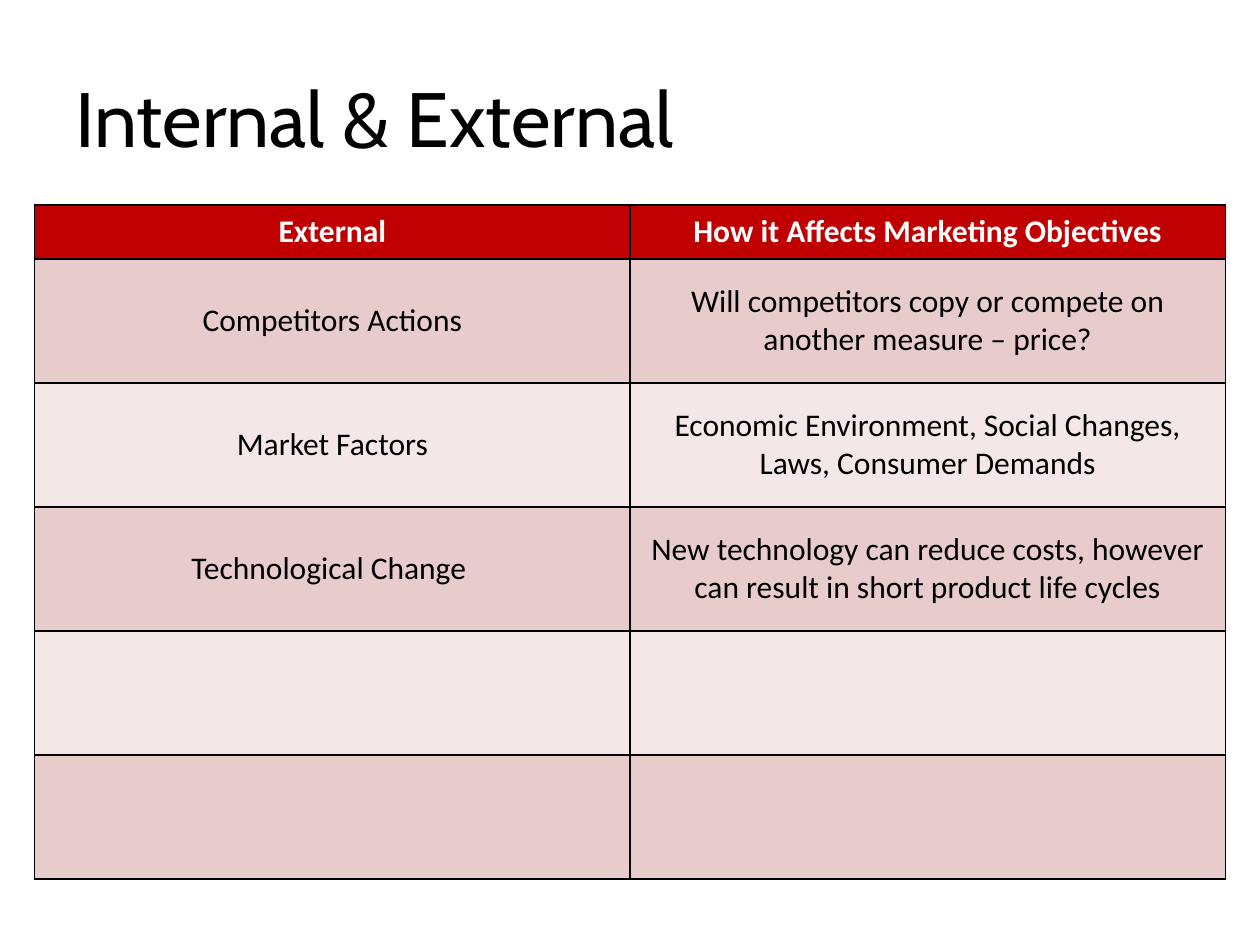
from typing import NamedTuple

from lxml import etree
from pptx import Presentation
from pptx.dml.color import RGBColor
from pptx.enum.text import MSO_ANCHOR, PP_ALIGN
from pptx.oxml.ns import qn
from pptx.util import Cm, Pt

LEFT, CENTER = PP_ALIGN.LEFT, PP_ALIGN.CENTER
MIDDLE = MSO_ANCHOR.MIDDLE
TITLE_ONLY = 5
BLACK, WHITE = "000000", "FFFFFF"
HEADER_RED, DARK_BAND, LIGHT_BAND = "C00000", "E8CCCC", "F4E7E7"
COLUMN_WIDTH, HEADER_HEIGHT, FACTOR_HEIGHT = Cm(12), Cm(1.09), Cm(2.5)


class Factor(NamedTuple):
    name: str = ""
    effect: str = ""


HEADINGS = Factor("External", "How it Affects Marketing Objectives")
FACTORS = [
    Factor("Competitors Actions",
           "Will competitors copy or compete on another measure – price?"),
    Factor("Market Factors",
           "Economic Environment, Social Changes, Laws, Consumer Demands"),
    Factor("Technological Change ",
           "New technology can reduce costs, however can result in short product life cycles"),
    Factor(),
    Factor(),
]


def rgb(value: str) -> RGBColor:
    return RGBColor.from_string(value)


def add_text(paragraph, text: str, font: str, size: int, color: str,
             bold: bool = False) -> None:
    run = paragraph.add_run()
    run.text = text
    run.font.name = font
    run.font.size = Pt(size)
    run.font.bold = bold
    run.font.color.rgb = rgb(color)


def add_borders(cell, color: str, width: int) -> None:
    properties = cell._tc.get_or_add_tcPr()
    for side in ("lnL", "lnR", "lnT", "lnB"):
        border = etree.SubElement(properties, qn(f"a:{side}"), w=str(Pt(width)))
        fill = etree.SubElement(border, qn("a:solidFill"))
        etree.SubElement(fill, qn("a:srgbClr"), val=color)


def fill_row(cells, factor: Factor, background: str, color: str, bold: bool) -> None:
    for cell, text in zip(cells, factor):
        add_borders(cell, BLACK, 1)
        cell.fill.solid()
        cell.fill.fore_color.rgb = rgb(background)
        cell.vertical_anchor = MIDDLE
        paragraph = cell.text_frame.paragraphs[0]
        paragraph.alignment = CENTER
        if text:
            add_text(paragraph, text, "Calibri", 18, color, bold)


def add_factor_table(slide, headings: Factor, factors: list[Factor]) -> None:
    height = HEADER_HEIGHT + FACTOR_HEIGHT * len(factors)
    table = slide.shapes.add_table(
        len(factors) + 1, len(headings), Cm(0.7), Cm(4.13),
        COLUMN_WIDTH * len(headings), height).table
    for column in table.columns:
        column.width = COLUMN_WIDTH
    for index, (row, factor) in enumerate(zip(table.rows, [headings, *factors])):
        is_header = index == 0
        row.height = HEADER_HEIGHT if is_header else FACTOR_HEIGHT
        band = DARK_BAND if index % 2 else LIGHT_BAND
        fill_row(row.cells, factor, HEADER_RED if is_header else band,
                 WHITE if is_header else BLACK, is_header)


def add_title(slide, text: str) -> None:
    title = slide.shapes.title
    title.left, title.top, title.width, title.height = (
        Cm(1.27), Cm(0.76), Cm(22.86), Cm(3.18))
    title.text_frame.vertical_anchor = MIDDLE
    heading = title.text_frame.paragraphs[0]
    heading.alignment = LEFT
    add_text(heading, text, "Cabin", 44, BLACK)


def main() -> None:
    presentation = Presentation()
    presentation.slide_width, presentation.slide_height = Cm(25.4), Cm(19.05)
    slide = presentation.slides.add_slide(presentation.slide_layouts[TITLE_ONLY])
    add_title(slide, "Internal & External")
    add_factor_table(slide, HEADINGS, FACTORS)
    presentation.save("out.pptx")


if __name__ == "__main__":
    main()
